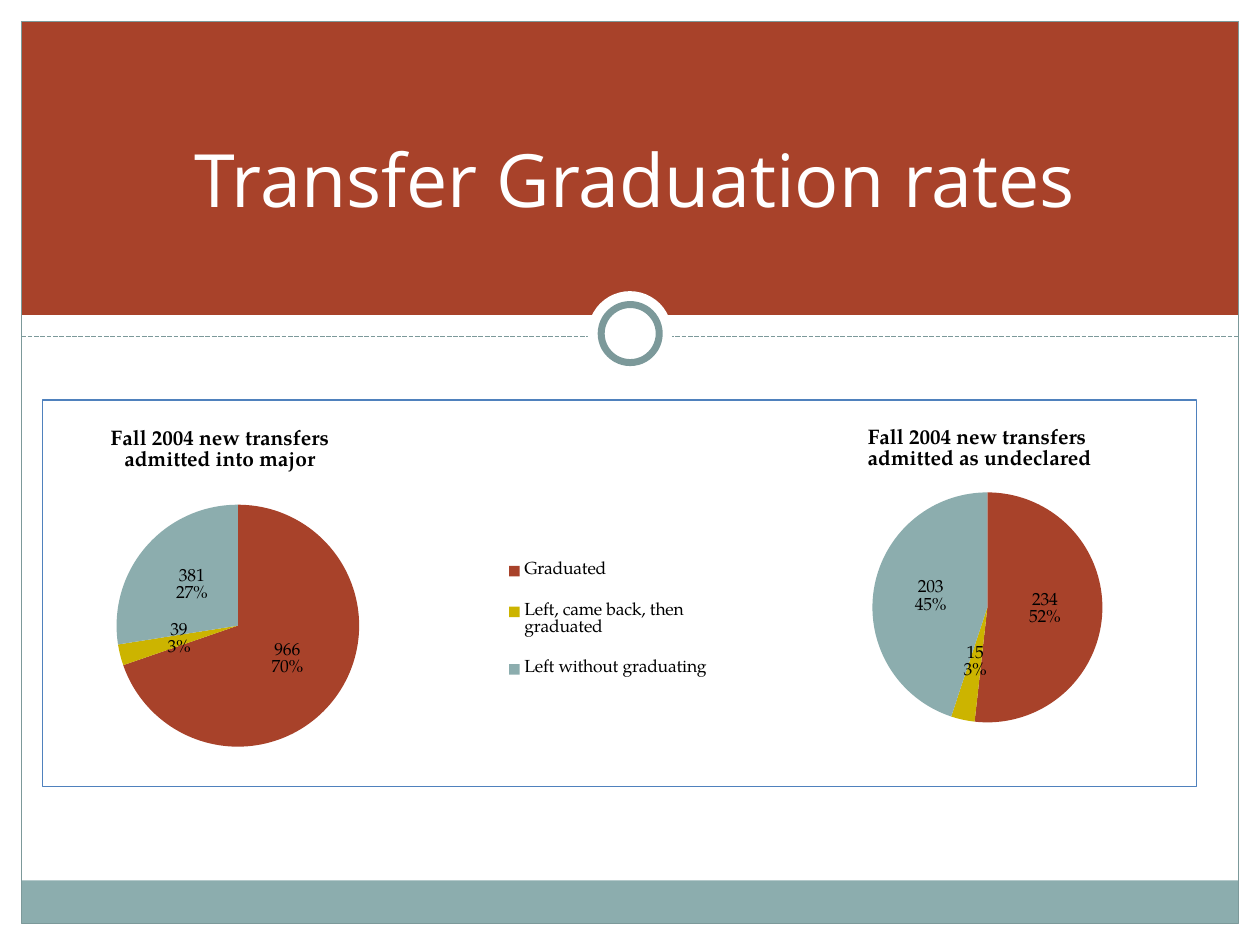
"""Build the slide comparing transfer graduation rates in two pie charts."""
from lxml import etree
from pptx import Presentation
from pptx.chart.data import CategoryChartData
from pptx.dml.color import RGBColor
from pptx.enum.chart import XL_CHART_TYPE, XL_LABEL_POSITION, XL_LEGEND_POSITION
from pptx.enum.dml import MSO_LINE
from pptx.enum.shapes import MSO_CONNECTOR, MSO_SHAPE
from pptx.enum.text import MSO_ANCHOR, PP_ALIGN
from pptx.oxml import parse_xml
from pptx.oxml.ns import nsdecls, qn
from pptx.util import Cm, Pt

RECTANGLE, OVAL = MSO_SHAPE.RECTANGLE, MSO_SHAPE.OVAL
PIE, CENTER, RIGHT = XL_CHART_TYPE.PIE, XL_LABEL_POSITION.CENTER, XL_LEGEND_POSITION.RIGHT

TITLE = "Transfer Graduation rates"
TITLE_FONT, CHART_FONT = "Open Sans", "TeX Gyre Pagella"
RED, GOLD, TEAL, SLATE = "A8422A", "CCB400", "8CADAE", "7C999A"
WHITE, BLACK, BORDER = "FFFFFF", "000000", "4F81BD"
SLICE_COLORS = [RED, GOLD, TEAL]
LEFT, TOP, WIDTH, HEIGHT = 0.43, 0.43, 24.54, 18.19

BACKDROP = [
    (RECTANGLE, (LEFT, TOP, WIDTH, 5.92), RED, None, 0),
    (RECTANGLE, (LEFT, 17.75, WIDTH, 0.86), TEAL, None, 0),
    (RECTANGLE, (LEFT, TOP, WIDTH, HEIGHT), None, SLATE, 0.75),
]
RING = [
    (OVAL, (11.85, 5.87, 1.7, 1.7), WHITE, None, 0),
    (OVAL, (12.12, 6.14, 1.17, 1.17), WHITE, SLATE, 4),
]
CHARTS = [
    {
        "title": "Fall 2004 new transfers\nadmitted into major",
        "categories": ["Graduated", "Left, came back, then graduated", "Left without graduating"],
        "values": [966, 39, 381],
        "box": (0.84, 8.05, 23.29, 7.82),
        "title_at": (0.056, 0.06),
        "plot_at": (0.064, 0.271, 0.211, 0.626),
        "legend_at": (0.39, 0.36, 0.2, 0.42),
        "border": BORDER,
    },
    {
        "title": "Fall 2004 new transfers\n admitted as undeclared",
        "categories": ["1", "2", "3"],
        "values": [234, 15, 203],
        "box": (13.13, 8.05, 11, 7.82),
        "title_at": (0.38, 0.06),
        "plot_at": (0.405, 0.24, 0.422, 0.593),
        "legend_at": None,
        "border": None,
    },
]


def color(value):
    return RGBColor.from_string(value)


def lengths(box):
    return [Cm(length) for length in box]


def add_figure(slide, kind, box, fill, line, line_width):
    shape = slide.shapes.add_shape(kind, *lengths(box))
    shape.shadow.inherit = False
    if fill:
        shape.fill.solid()
        shape.fill.fore_color.rgb = color(fill)
    else:
        shape.fill.background()
    if line:
        shape.line.color.rgb = color(line)
        shape.line.width = Pt(line_width)
    else:
        shape.line.fill.background()


def add_divider(slide):
    y = Cm(6.78)
    connector = slide.shapes.add_connector(MSO_CONNECTOR.STRAIGHT, Cm(LEFT), y, Cm(LEFT + WIDTH), y)
    connector.line.color.rgb = color(SLATE)
    connector.line.width = Pt(0.9)
    connector.line.dash_style = MSO_LINE.SQUARE_DOT
    etree.SubElement(connector.element.spPr, qn("a:effectLst"))


def add_title(slide):
    text_frame = slide.shapes.add_textbox(*lengths((2.01, 1.47, 21.59, 4.24))).text_frame
    text_frame.word_wrap = True
    text_frame.vertical_anchor = MSO_ANCHOR.MIDDLE
    text_frame.text = TITLE
    paragraph = text_frame.paragraphs[0]
    paragraph.alignment = PP_ALIGN.CENTER
    font = paragraph.runs[0].font
    font.name, font.size, font.color.rgb = TITLE_FONT, Pt(42), color(WHITE)


def place(element, position, after=None, inner=False):
    for old_layout in element.findall(qn("c:layout")):
        element.remove(old_layout)
    layout = etree.Element(qn("c:layout"))
    manual = etree.SubElement(layout, qn("c:manualLayout"))
    settings = [("layoutTarget", "inner")] if inner else []
    settings += [("xMode", "edge"), ("yMode", "edge"), *zip("xywh", position)]
    for name, value in settings:
        etree.SubElement(manual, qn(f"c:{name}")).set("val", str(value))
    if after:
        element.find(qn(after)).addnext(layout)
    else:
        element.insert(0, layout)


def style_slices(series):
    for index, slice_color in enumerate(SLICE_COLORS):
        point = series.points[index]
        point.format.fill.solid()
        point.format.fill.fore_color.rgb = color(slice_color)
        point.format.line.fill.background()
    labels = series.data_labels
    labels.show_value = labels.show_percentage = True
    labels.position = CENTER
    separator = etree.Element(qn("c:separator"))
    separator.text = "\n"
    series.data_labels._element.find(qn("c:showBubbleSize")).addnext(separator)


def style_title(chart, text, position):
    chart.has_title = True
    title = chart.chart_title
    title.text_frame.text = text
    for paragraph in title.text_frame.paragraphs:
        font = paragraph.runs[0].font
        font.name, font.size, font.bold = CHART_FONT, Pt(12), True
        font.color.rgb = color(BLACK)
    place(title._element, position, after="c:tx")


def style_frame(chart, border):
    line = f'<a:solidFill><a:srgbClr val="{border}"/></a:solidFill>' if border else "<a:noFill/>"
    properties = parse_xml(
        f'<c:spPr {nsdecls("c", "a")}><a:noFill/><a:ln w="{Pt(0.75)}">{line}</a:ln></c:spPr>'
    )
    chart.element.find(qn("c:chart")).addnext(properties)


def add_pie(slide, content):
    data = CategoryChartData()
    data.categories = content["categories"]
    data.add_series("Series 1", content["values"])
    chart = slide.shapes.add_chart(PIE, *lengths(content["box"]), data).chart
    chart.font.name, chart.font.size = CHART_FONT, Pt(10)
    chart.font.color.rgb = color(BLACK)
    chart.plots[0].vary_by_categories = True
    style_slices(chart.plots[0].series[0])
    style_title(chart, content["title"], content["title_at"])
    place(chart.element.find(".//" + qn("c:plotArea")), content["plot_at"], inner=True)
    chart.has_legend = content["legend_at"] is not None
    if chart.has_legend:
        chart.legend.position = RIGHT
        chart.legend.include_in_layout = False
        place(chart.legend._element, content["legend_at"], after="c:legendPos")
    style_frame(chart, content["border"])


def main():
    presentation = Presentation()
    presentation.slide_width, presentation.slide_height = Cm(25.4), Cm(19.05)
    slide = presentation.slides.add_slide(presentation.slide_layouts[6])
    for figure in BACKDROP:
        add_figure(slide, *figure)
    add_divider(slide)
    for figure in RING:
        add_figure(slide, *figure)
    for content in CHARTS:
        add_pie(slide, content)
    add_title(slide)
    presentation.save("out.pptx")


if __name__ == "__main__":
    main()
